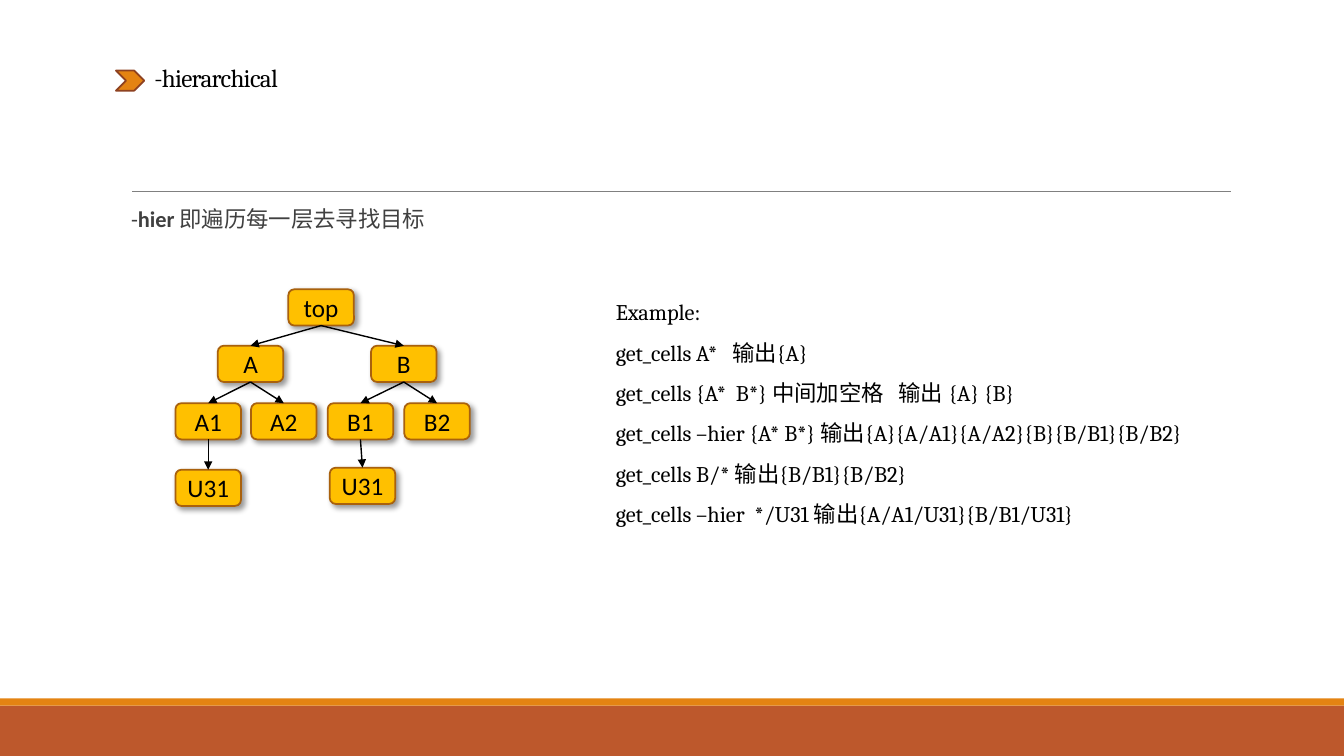
from lxml.etree import SubElement
from pptx import Presentation
from pptx.dml.color import RGBColor
from pptx.enum.shapes import MSO_CONNECTOR, MSO_SHAPE
from pptx.enum.text import MSO_ANCHOR, MSO_AUTO_SIZE, PP_ALIGN
from pptx.oxml.ns import qn
from pptx.util import Inches, Pt

COLORS = {
    "band": "BD582C", "accent": "E48312", "rule": "808080", "chevron_line": "8E4221",
    "node": "FFC000", "node_line": "A9610D", "body": "404040", "black": "000000",
}
NODE_W, NODE_H = 0.65, 0.36


def rgb(name):
    return RGBColor.from_string(COLORS[name])


def add_run(p, text, size, font, color, bold=False):
    r = p.add_run()
    r.text = text
    for key, value in {"size": Pt(size), "name": font, "bold": bold}.items():
        setattr(r.font, key, value)
    r.font.color.rgb = rgb(color)
    return r


prs = Presentation()
prs.slide_width, prs.slide_height = Inches(13.33), Inches(7.5)
s = prs.slides.add_slide(prs.slide_layouts[1])

# Footer bands, chevron
for kind, x, y, w, h, fill, line in [
    (MSO_SHAPE.RECTANGLE, 0, 7, 13.33, 0.5, "band", None),
    (MSO_SHAPE.RECTANGLE, 0, 6.93, 13.33, 0.07, "accent", None),
    (MSO_SHAPE.CHEVRON, 1.15, 0.7, 0.28, 0.2, "accent", "chevron_line"),
]:
    sp = s.shapes.add_shape(kind, Inches(x), Inches(y), Inches(w), Inches(h))
    sp.shadow.inherit = False
    sp.fill.solid()
    sp.fill.fore_color.rgb = rgb(fill)
    if line:
        sp.line.color.rgb = rgb(line)
        sp.line.width = Pt(1.25)
    else:
        sp.line.fill.background()

# Rule under the title
rule = s.shapes.add_connector(
    MSO_CONNECTOR.STRAIGHT, Inches(1.31), Inches(1.9), Inches(12.21), Inches(1.9))
rule.line.color.rgb = rgb("rule")
rule.line.width = Pt(0.5)
SubElement(rule._element.spPr, qn("a:effectLst"))

# Title and body
title, body = s.shapes.title, s.placeholders[1]
examples = s.shapes.add_textbox(0, 0, 0, 0)
for sp, x, y, w, h, anchor in [
    (title, 1.43, 0.64, 1.68, 0.33, MSO_ANCHOR.BOTTOM),
    (body, 1.2, 2.02, 3.77, 4.54, MSO_ANCHOR.TOP),
    (examples, 6.01, 2.78, 6.65, 3.74, MSO_ANCHOR.TOP),
]:
    sp.left, sp.top, sp.width, sp.height = Inches(x), Inches(y), Inches(w), Inches(h)
    tf = sp.text_frame
    for key, value in {"word_wrap": True, "auto_size": MSO_AUTO_SIZE.NONE,
                       "vertical_anchor": anchor}.items():
        setattr(tf, key, value)

p = title.text_frame.paragraphs[0]
p.alignment, p.line_spacing = PP_ALIGN.LEFT, 0.85
r = add_run(p, "-hierarchical", 18, "Cambria", "black")
r._r.get_or_add_rPr().set("spc", "-50")

tf = body.text_frame
tf.margin_left = tf.margin_right = 0
p = tf.paragraphs[0]
for key, value in {"line_spacing": 0.9, "space_before": Pt(12), "space_after": Pt(2)}.items():
    setattr(p, key, value)
pPr = p._p.get_or_add_pPr()
pPr.set("marL", str(Inches(0.1)))
pPr.set("indent", "0")
SubElement(pPr, qn("a:buNone"))
for text, bold in [("-", False), ("hier ", True), ("即遍历每一层去寻找目标", False)]:
    add_run(p, text, 16, "Calibri", "body", bold)

# Example commands
tf = examples.text_frame
for i, text in enumerate([
    "Example:",
    "get_cells A*   输出{A}",
    "get_cells {A*  B*} 中间加空格   输出 {A} {B}",
    "get_cells –hier {A* B*} 输出{A}{A/A1}{A/A2}{B}{B/B1}{B/B2}",
    "get_cells B/* 输出{B/B1}{B/B2}",
    "get_cells –hier  */U31 输出{A/A1/U31}{B/B1/U31}",
]):
    p = tf.paragraphs[0] if i == 0 else tf.add_paragraph()
    p.line_spacing = 1.5
    add_run(p, text, 16, "Cambria", "black")

# Cell tree: path -> left, top; each node hangs from the path above it
nodes = {}
for name, x, y in [
    ("top", 2.86, 2.87),
    ("top/A", 2.16, 3.43), ("top/B", 3.68, 3.43),
    ("top/A/A1", 1.74, 4), ("top/A/A2", 2.49, 4),
    ("top/B/B1", 3.25, 4), ("top/B/B2", 4.01, 4),
    ("top/A/A1/U31", 1.74, 4.66), ("top/B/B1/U31", 3.27, 4.64),
]:
    parent, _, label = name.rpartition("/")
    sp = s.shapes.add_shape(MSO_SHAPE.ROUNDED_RECTANGLE, Inches(x), Inches(y),
                            Inches(NODE_W), Inches(NODE_H))
    nodes[name] = sp
    sp.fill.solid()
    sp.fill.fore_color.rgb = rgb("node")
    sp.line.color.rgb = rgb("node_line")
    sp.line.width = Pt(1.25)
    sp.shadow.inherit = False
    shadow = SubElement(sp._element.spPr.find(qn("a:effectLst")), qn("a:outerShdw"),
                        blurRad=str(Pt(4)), dist=str(Pt(3)), dir=str(45 * 60000),
                        algn="tl", rotWithShape="0")
    shade = SubElement(shadow, qn("a:srgbClr"), val=COLORS["black"])
    SubElement(shade, qn("a:alpha"), val="40000")

    tf = sp.text_frame
    tf.vertical_anchor = MSO_ANCHOR.MIDDLE
    p = tf.paragraphs[0]
    p.alignment = PP_ALIGN.CENTER
    add_run(p, label, 18, "Calibri", "black")

    if parent:
        arrow = s.shapes.add_connector(MSO_CONNECTOR.STRAIGHT, 0, 0, 0, 0)
        arrow.begin_connect(nodes[parent], 2)
        arrow.end_connect(sp, 0)
        arrow.line.color.rgb = rgb("black")
        arrow.line.width = Pt(1)
        SubElement(arrow.line._get_or_add_ln(), qn("a:tailEnd"), type="triangle")
        SubElement(arrow._element.spPr, qn("a:effectLst"))

prs.save("out.pptx")
